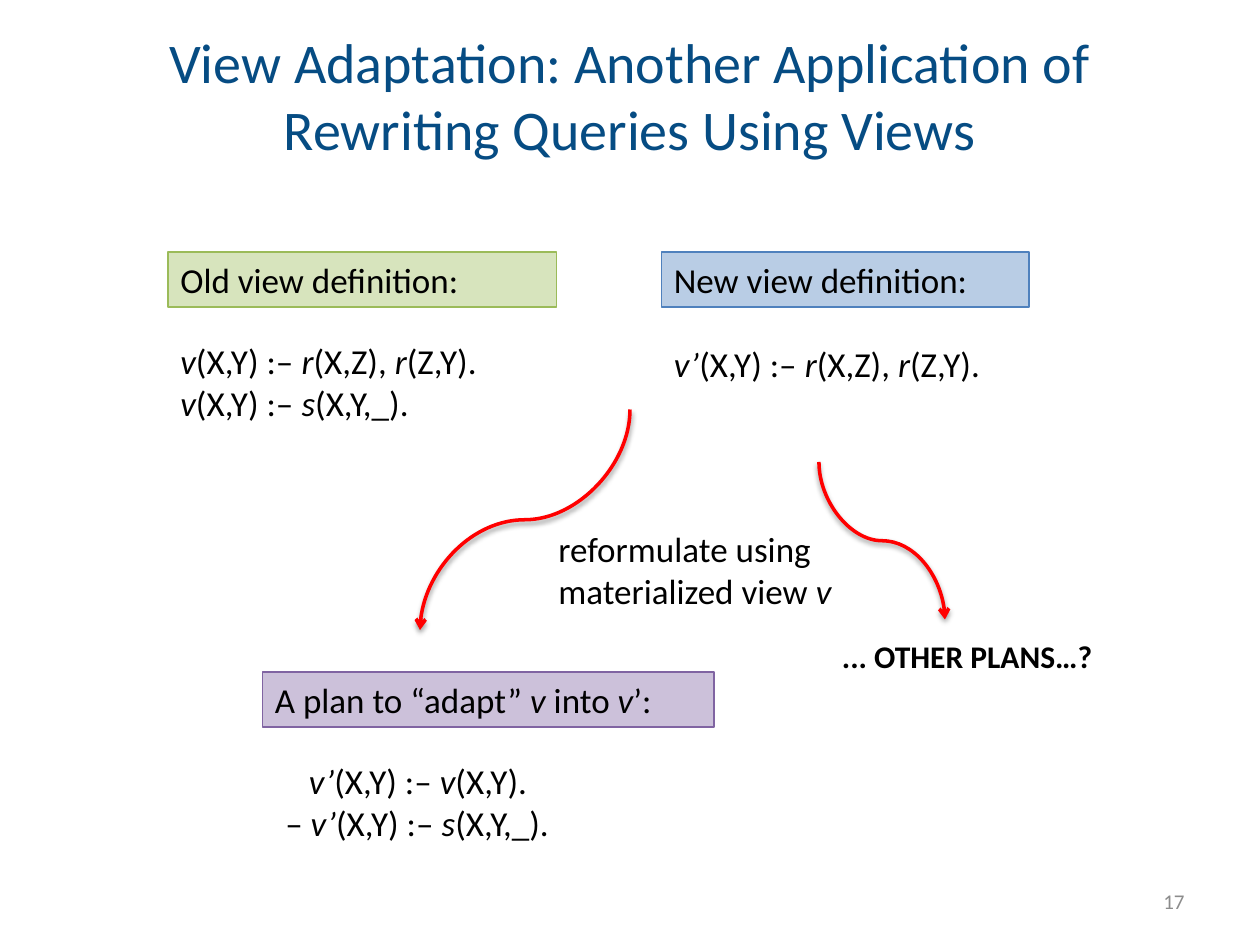
from lxml.etree import SubElement
from pptx import Presentation
from pptx.dml.color import RGBColor
from pptx.enum.shapes import MSO_CONNECTOR, MSO_SHAPE
from pptx.enum.text import MSO_ANCHOR, PP_ALIGN
from pptx.oxml.ns import qn
from pptx.util import Pt

BLACK, RED = "000000", "FF0000"
LINE_HEIGHT = 31.5


def color(value):
    return RGBColor.from_string(value)


def write(box, lines, size=20, ink=BLACK, bold=False,
          align=PP_ALIGN.LEFT, anchor=MSO_ANCHOR.TOP):
    """Write one paragraph per line; text between asterisks is italic."""
    frame = box.text_frame
    frame.word_wrap = True
    frame.vertical_anchor = anchor
    for index, line in enumerate(lines):
        para = frame.add_paragraph() if index else frame.paragraphs[0]
        para.alignment = align
        for part, words in enumerate(line.split("*")):
            if not words:
                continue
            span = para.add_run()
            span.text = words
            formats = {"name": "Calibri", "size": Pt(size),
                       "bold": bold, "italic": part % 2 == 1}
            for name, value in formats.items():
                setattr(span.font, name, value)
            span.font.color.rgb = color(ink)


def add_text(page, left, top, width, height, lines, **formats):
    box = page.shapes.add_textbox(Pt(left), Pt(top), Pt(width), Pt(height))
    write(box, lines, **formats)
    return box


def add_heading(page, left, top, width, line, fill, border):
    box = page.shapes.add_shape(MSO_SHAPE.RECTANGLE, Pt(left), Pt(top),
                                Pt(width), Pt(LINE_HEIGHT))
    box.shadow.inherit = False
    box.fill.solid()
    box.fill.fore_color.rgb = color(fill)
    box.line.color.rgb = color(border)
    box.line.width = Pt(0.75)
    write(box, [line])


def add_curve(page, x1, y1, x2, y2):
    """Draw an S-curve that leaves and arrives vertically, as a turned connector."""
    middle_x, middle_y = (x1 + x2) / 2, (y1 + y2) / 2
    half_width, half_height = (y2 - y1) / 2, abs(x2 - x1) / 2
    rightward = x2 > x1
    side = half_width if rightward else -half_width
    curve = page.shapes.add_connector(
        MSO_CONNECTOR.CURVE,
        Pt(middle_x + side), Pt(middle_y - half_height),
        Pt(middle_x - side), Pt(middle_y + half_height))
    curve.line.color.rgb = color(RED)
    curve.line.width = Pt(2)
    properties = curve._element.spPr
    turn = 270 if rightward else 90
    properties.find(qn("a:xfrm")).set("rot", str(turn * 60000))

    # Arrowhead and soft shadow
    SubElement(properties.find(qn("a:ln")), qn("a:tailEnd"), type="arrow")
    effects = SubElement(properties, qn("a:effectLst"))
    shadow = SubElement(effects, qn("a:outerShdw"), blurRad=str(Pt(3.1)),
                        dist=str(Pt(1.6)), dir="5400000", rotWithShape="0")
    shade = SubElement(shadow, qn("a:srgbClr"), val=BLACK)
    SubElement(shade, qn("a:alpha"), val="38000")


def add_title(page, left, top, width, height):
    add_text(page, left, top, width, height,
             ["View Adaptation: Another Application of Rewriting Queries Using Views"],
             size=32, ink="064C83", align=PP_ALIGN.CENTER, anchor=MSO_ANCHOR.MIDDLE)


def add_definitions(page, left, top):
    # Old view
    add_heading(page, left, top, 222, "Old view definition:", "D7E4BD", "9BBB59")
    add_text(page, left, top + 46.5, 210, 55.5,
             ["*v*(X,Y) :– *r*(X,Z), *r*(Z,Y).", "*v*(X,Y) :– *s*(X,Y,_)."])
    # New view
    right = left + 282
    add_heading(page, right, top, 210, "New view definition:", "B9CDE5", "4F81BD")
    add_text(page, right, top + 48, 210, LINE_HEIGHT,
             ["*v’*(X,Y) :– *r*(X,Z), *r*(Z,Y)."])


def add_plan(page, left, top):
    add_heading(page, left, top, 258, "A plan to “adapt” *v* into *v*’:",
                "CCC1DA", "8064A2")
    rules = add_text(page, left + 6, top + 46.5, 294, 55.5,
                     ["*v’*(X,Y) :– *v*(X,Y).", "–* v’*(X,Y) :– *s*(X,Y,_)."])
    # The first rule lines up with the one behind the dash
    first = rules.text_frame.paragraphs[0]
    first._p.get_or_add_pPr().set("marL", str(Pt(13.5)))


def add_reformulation(page):
    add_curve(page, 360, 234, 240, 360)
    add_text(page, 312, 298, 180, 55.5,
             ["reformulate using materialized view *v*"])
    add_curve(page, 468, 264, 540, 354)
    add_text(page, 474, 360.5, 228, 29, ["... OTHER PLANS…?"], size=18, bold=True)


def add_page_number(page, left, top, width, height):
    add_text(page, left, top, width, height, ["17"], size=12, ink="8C8C8C",
             align=PP_ALIGN.RIGHT, anchor=MSO_ANCHOR.MIDDLE)


def main():
    deck = Presentation()
    deck.slide_width, deck.slide_height = Pt(720), Pt(540)
    page = deck.slides.add_slide(deck.slide_layouts[6])
    add_title(page, 36, 30, 648, 48)
    add_definitions(page, 96, 144)
    add_plan(page, 150, 384)
    add_reformulation(page)
    add_page_number(page, 516, 500.5, 168, 28.75)
    deck.save("out.pptx")


if __name__ == "__main__":
    main()
